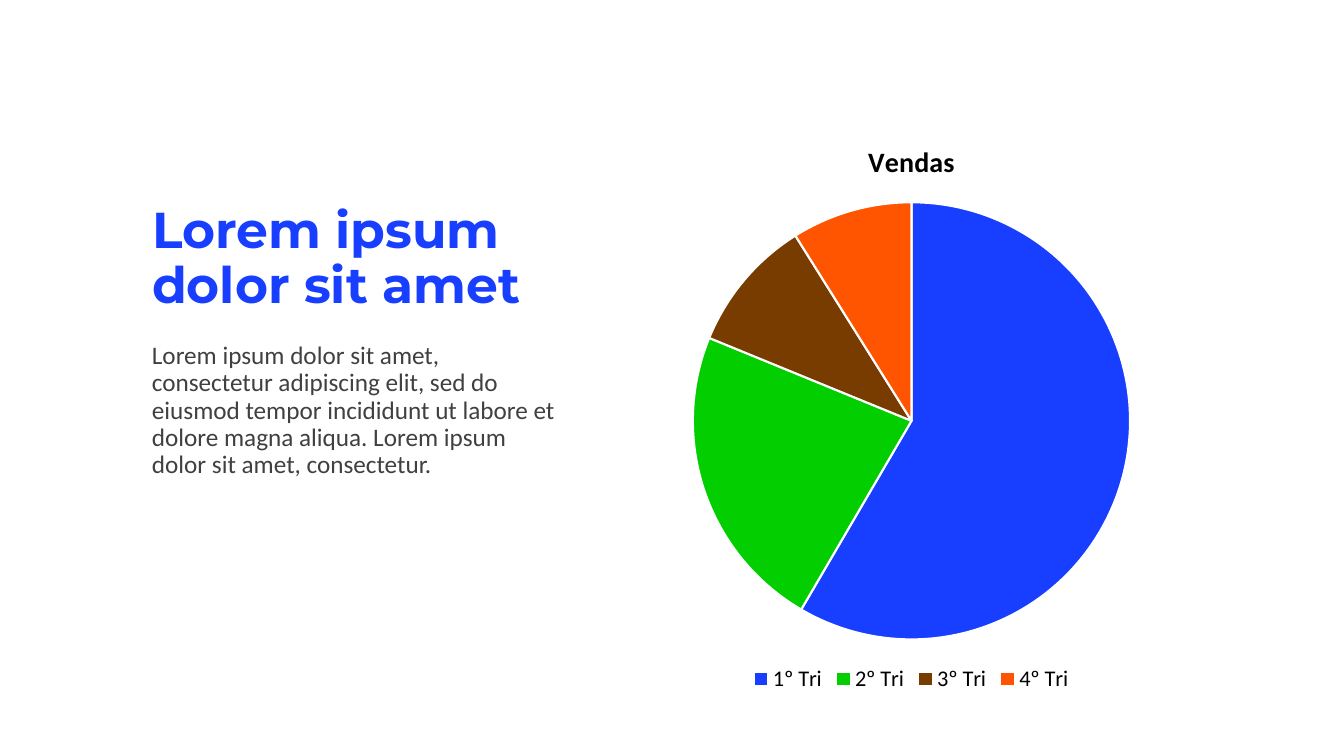
"""Builds a slide with a heading, a paragraph and a pie chart of quarterly sales."""
from pptx import Presentation
from pptx.chart.data import CategoryChartData
from pptx.dml.color import RGBColor
from pptx.enum.chart import XL_CHART_TYPE, XL_LEGEND_POSITION
from pptx.enum.text import MSO_ANCHOR, MSO_AUTO_SIZE, PP_ALIGN
from pptx.util import Emu, Pt

BLUE = RGBColor(0x18, 0x3E, 0xFF)
GREEN = RGBColor(0x03, 0xCF, 0x00)
BROWN = RGBColor(0x78, 0x3C, 0x00)
ORANGE = RGBColor(0xFF, 0x55, 0x00)
GREY = RGBColor(0x40, 0x40, 0x40)
BLACK = RGBColor(0x00, 0x00, 0x00)
WHITE = RGBColor(0xFF, 0xFF, 0xFF)


class SlideBuilder:
    """Holds the style and the current slide."""

    heading_font = "Montserrat"
    body_font = "Calibri"
    scale = 914400 / 100.8

    def __init__(self, deck):
        """Set the slide size and add a title-only page."""
        deck.slide_width, deck.slide_height = self.emu(1344, 756)
        self.page = deck.slides.add_slide(deck.slide_layouts[5])

    def emu(self, *lengths):
        """Turn px lengths into EMU."""
        return [Emu(round(length * self.scale)) for length in lengths]

    def style(self, font, name, size, color, bold=False):
        """Format one font."""
        font.name, font.size, font.bold = name, Pt(size), bold
        font.color.rgb = color

    def fill_text(self, box, text, name, size, color, bold=False):
        """Write one left-aligned paragraph into a box."""
        frame = box.text_frame
        frame.text = text
        frame.word_wrap = True
        frame.auto_size = MSO_AUTO_SIZE.NONE
        frame.vertical_anchor = MSO_ANCHOR.TOP
        para = frame.paragraphs[0]
        para.alignment = PP_ALIGN.LEFT
        para.line_spacing = 0.9
        self.style(para.runs[0].font, name, size, color, bold)

    def title(self, text, left, top, width, height):
        """Place and format the title placeholder."""
        box = self.page.shapes.title
        box.left, box.top, box.width, box.height = self.emu(left, top, width, height)
        self.fill_text(box, text, self.heading_font, 36, BLUE, True)

    def text(self, text, left, top, width, height):
        """Add a body paragraph."""
        box = self.page.shapes.add_textbox(*self.emu(left, top, width, height))
        self.fill_text(box, text, self.body_font, 18, GREY)

    def pie(self, heading, slices, left, top, width, height):
        """Add a pie chart from (category, value, colour) slices."""
        data = CategoryChartData()
        data.categories = [category for category, _, _ in slices]
        data.add_series(heading, [value for _, value, _ in slices])
        chart = self.page.shapes.add_chart(
            XL_CHART_TYPE.PIE, *self.emu(left, top, width, height), data).chart
        self.style(chart.font, self.body_font, 10, BLACK)

        chart.has_title = True
        chart.chart_title.include_in_layout = False
        frame = chart.chart_title.text_frame
        frame.text = heading
        self.style(frame.paragraphs[0].runs[0].font, self.body_font, 20, BLACK, True)

        chart.has_legend = True
        chart.legend.position = XL_LEGEND_POSITION.BOTTOM
        chart.legend.include_in_layout = False
        self.style(chart.legend.font, self.body_font, 16, BLACK)

        plot = chart.plots[0]
        plot.vary_by_categories = True
        for index, (_, _, color) in enumerate(slices):
            wedge = plot.series[0].points[index].format
            wedge.fill.solid()
            wedge.fill.fore_color.rgb = color
            wedge.line.color.rgb = WHITE
            wedge.line.width = Pt(1.5)


def main():
    """Build and save the deck."""
    deck = Presentation()
    builder = SlideBuilder(deck)
    builder.title("Lorem ipsum dolor sit amet", 142, 200, 428, 383)
    builder.text(
        "Lorem ipsum dolor sit amet, consectetur adipiscing elit, sed do eiusmod "
        "tempor incididunt ut labore et dolore magna aliqua. Lorem ipsum dolor sit "
        "amet, consectetur.", 142, 338, 428, 125)
    quarters = [
        ("1º Tri", 59, BLUE),
        ("2º Tri", 23, GREEN),
        ("3º Tri", 10, BROWN),
        ("4º Tri", 9, ORANGE),
    ]
    builder.pie("Vendas", quarters, 631, 120, 561, 577)
    deck.save("out.pptx")


if __name__ == "__main__":
    main()
